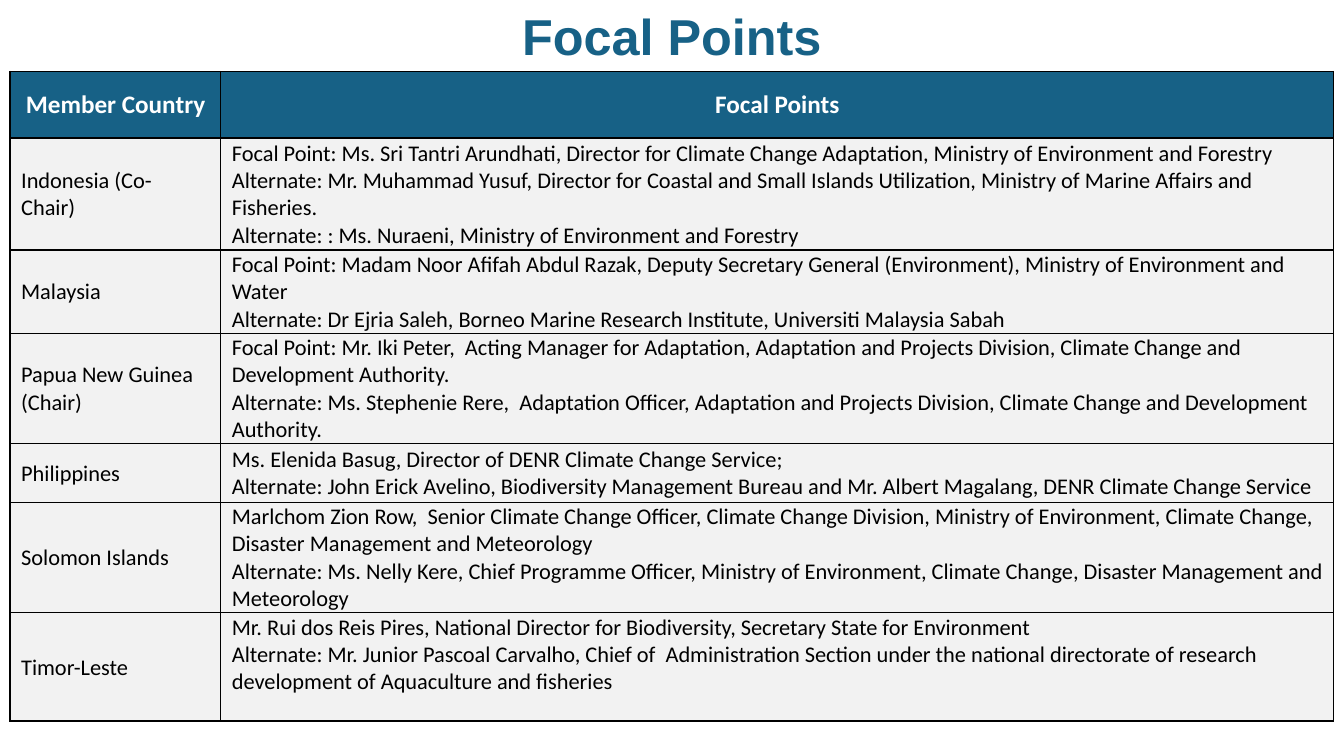
import pptx
import pptx.util
import pptx.dml.color
import pptx.enum.text
import pptx.oxml
import pptx.oxml.ns
from pptx.util import Inches

COLORS = {"teal": "176186", "white": "FFFFFF", "black": "000000", "gray": "F2F2F2"}
MIDDLE = pptx.enum.text.MSO_ANCHOR.MIDDLE
CENTER = pptx.enum.text.PP_ALIGN.CENTER
LEFT = pptx.enum.text.PP_ALIGN.LEFT


def add_span(para, text, size, font, color, bold):
    span = para.add_run()
    span.text = text
    span.font.size = pptx.util.Pt(size)
    span.font.name = font
    span.font.bold = bold
    span.font.color.rgb = pptx.dml.color.RGBColor.from_string(COLORS[color])


def add_borders(cell):
    properties = cell._tc.get_or_add_tcPr()
    for position, side in enumerate(("lnL", "lnR", "lnT", "lnB")):
        border = pptx.oxml.parse_xml(
            f'<a:{side} {pptx.oxml.ns.nsdecls("a")} w="12700"><a:solidFill>'
            f'<a:srgbClr val="{COLORS["black"]}"/></a:solidFill></a:{side}>'
        )
        properties.insert(position, border)


rows = [
    (0.66, [" Member Country"], ["Focal Points"]),
    (1.11, ["Indonesia (Co-", "Chair)"], [
        "Focal Point: Ms. Sri Tantri Arundhati, Director for Climate Change Adaptation, Ministry of Environment and Forestry",
        "Alternate: Mr. Muhammad Yusuf, Director for Coastal and Small Islands Utilization, Ministry of Marine Affairs and Fisheries.",
        "Alternate: : Ms. Nuraeni, Ministry of Environment and Forestry",
    ]),
    (0.81, ["Malaysia"], [
        "Focal Point: Madam Noor Afifah Abdul Razak, Deputy Secretary General (Environment), Ministry of Environment and Water",
        "Alternate: Dr Ejria Saleh, Borneo Marine Research Institute, Universiti Malaysia Sabah",
    ]),
    (1.07, ["Papua New Guinea (Chair)"], [
        "Focal Point: Mr. Iki Peter,  Acting Manager for Adaptation, Adaptation and Projects Division, Climate Change and Development Authority.",
        "Alternate: Ms. Stephenie Rere,  Adaptation Officer, Adaptation and Projects Division, Climate Change and Development Authority.",
    ]),
    (0.58, ["Philippines"], [
        "Ms. Elenida Basug, Director of DENR Climate Change Service;",
        "Alternate: John Erick Avelino, Biodiversity Management Bureau and Mr. Albert Magalang, DENR Climate Change Service",
    ]),
    (1.08, ["Solomon Islands"], [
        "Marlchom Zion Row,  Senior Climate Change Officer, Climate Change Division, Ministry of Environment, Climate Change, Disaster Management and Meteorology",
        "Alternate: Ms. Nelly Kere, Chief Programme Officer, Ministry of Environment, Climate Change, Disaster Management and Meteorology",
    ]),
    (1.07, ["Timor-Leste"], [
        "Mr. Rui dos Reis Pires, National Director for Biodiversity, Secretary State for Environment",
        "Alternate: Mr. Junior Pascoal Carvalho, Chief of  Administration Section under the national directorate of research development of Aquaculture and fisheries",
    ]),
]

deck = pptx.Presentation()
deck.slide_width = Inches(13.33)
deck.slide_height = Inches(7.5)
page = deck.slides.add_slide(deck.slide_layouts[5])

title = page.shapes.title
title.left, title.top = Inches(2.81), Inches(0)
title.width, title.height = Inches(7.71), Inches(0.71)
title.text_frame.vertical_anchor = MIDDLE
title_para = title.text_frame.paragraphs[0]
title_para.alignment = CENTER
add_span(title_para, "Focal Points", 36, "Arial", "teal", True)

total_height = sum(height for height, country, contacts in rows)
frame = page.shapes.add_table(
    len(rows), 2, Inches(0.1), Inches(0.71), Inches(13.13), Inches(total_height)
)
table = frame.table
table.horz_banding = False
table.columns[0].width = Inches(2.09)
table.columns[1].width = Inches(11.04)

for row_index, (height, country, contacts) in enumerate(rows):
    table.rows[row_index].height = Inches(height)
    header = row_index == 0
    for column_index, lines in enumerate((country, contacts)):
        cell = table.cell(row_index, column_index)
        cell.vertical_anchor = MIDDLE
        cell.margin_left = cell.margin_right = Inches(0.1 if header else 0.01)
        cell.margin_top = Inches(0.05 if header else 0.01)
        cell.margin_bottom = Inches(0.05 if header else 0)
        cell.fill.solid()
        fill = COLORS["teal" if header else "gray"]
        cell.fill.fore_color.rgb = pptx.dml.color.RGBColor.from_string(fill)
        add_borders(cell)
        for line_index, line in enumerate(lines):
            text_frame = cell.text_frame
            para = text_frame.add_paragraph() if line_index else text_frame.paragraphs[0]
            para.alignment = CENTER if header and column_index else LEFT
            if header:
                add_span(para, line, 18, "Calibri", "white", True)
            else:
                para._p.get_or_add_pPr().set("marL", str(Inches(0.1)))
                add_span(para, line, 16, "Calibri", "black", False)

table.cell(len(rows) - 1, 1).margin_bottom = Inches(0.25)

deck.save("out.pptx")
